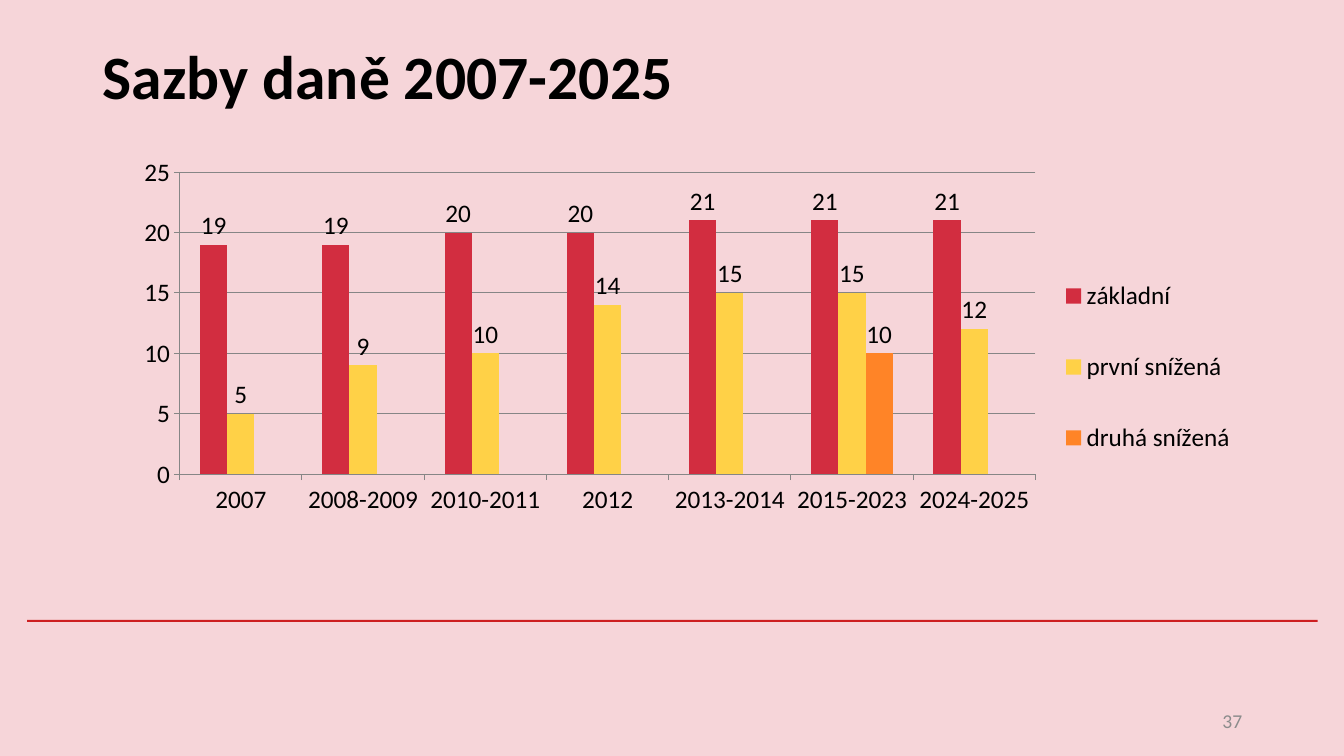
from lxml import etree
from pptx import Presentation
from pptx.chart.data import CategoryChartData
from pptx.dml.color import RGBColor
from pptx.enum.chart import XL_CHART_TYPE, XL_LABEL_POSITION, XL_LEGEND_POSITION, XL_TICK_MARK
from pptx.enum.shapes import MSO_SHAPE
from pptx.enum.text import MSO_ANCHOR, PP_ALIGN
from pptx.oxml.ns import qn
from pptx.util import Inches, Pt

CLUSTERED = XL_CHART_TYPE.COLUMN_CLUSTERED
OUTSIDE_END = XL_LABEL_POSITION.OUTSIDE_END
LEGEND_RIGHT = XL_LEGEND_POSITION.RIGHT
TICK_OUT = XL_TICK_MARK.OUTSIDE
RECTANGLE = MSO_SHAPE.RECTANGLE
MIDDLE = MSO_ANCHOR.MIDDLE
LEFT, RIGHT = PP_ALIGN.LEFT, PP_ALIGN.RIGHT

FONT = "Calibri"
COLORS = {
    "background": "F6D5D9",
    "rule": "CD1F21",
    "text": "000000",
    "number": "8C8C8C",
    "grid": "868686",
}
PERIODS = ["2007", "2008-2009", "2010-2011", "2012", "2013-2014", "2015-2023", "2024-2025"]
RATES = [
    ("základní", "D22D40", [19, 19, 20, 20, 21, 21, 21]),
    ("první snížená", "FFD147", [5, 9, 10, 14, 15, 15, 12]),
    ("druhá snížená", "FF8427", [None, None, None, None, None, 10, None]),
]


def rgb(value):
    return RGBColor.from_string(value)


def set_layout(parent, index, x, y, w, h, inner=False):
    """Place a chart part by fractions of the chart, as child number index."""
    for old in parent.findall(qn("c:layout")):
        parent.remove(old)
    layout = etree.Element(qn("c:layout"))
    manual = etree.SubElement(layout, qn("c:manualLayout"))
    items = [("layoutTarget", "inner")] if inner else []
    items += [("xMode", "edge"), ("yMode", "edge"), ("x", x), ("y", y), ("w", w), ("h", h)]
    for tag, value in items:
        etree.SubElement(manual, qn(f"c:{tag}")).set("val", str(value))
    parent.insert(index, layout)


class SlideBuilder:
    def __init__(self, prs):
        self.slide = prs.slides.add_slide(prs.slide_layouts[5])
        fill = self.slide.background.fill
        fill.solid()
        fill.fore_color.rgb = rgb(COLORS["background"])

    def style_font(self, font, size, color="text", bold=False):
        font.name = FONT
        font.size = Pt(size)
        font.bold = bold
        font.color.rgb = rgb(COLORS[color])

    def fill_text(self, sp, text, size, align, color="text", bold=False):
        tf = sp.text_frame
        tf.text = text
        tf.word_wrap = True
        tf.vertical_anchor = MIDDLE
        p = tf.paragraphs[0]
        p.alignment = align
        self.style_font(p.font, size, color, bold)

    def title(self, box, text):
        sp = self.slide.shapes.title
        sp.left, sp.top, sp.width, sp.height = map(Inches, box)
        self.fill_text(sp, text, 44, LEFT, bold=True)

    def text(self, box, text, size, align, color):
        sp = self.slide.shapes.add_textbox(*map(Inches, box))
        self.fill_text(sp, text, size, align, color)

    def bar(self, box, color):
        sp = self.slide.shapes.add_shape(RECTANGLE, *map(Inches, box))
        sp.shadow.inherit = False
        sp.fill.solid()
        sp.fill.fore_color.rgb = rgb(COLORS[color])
        sp.line.fill.background()

    def style_axis(self, axis):
        axis.major_tick_mark = TICK_OUT
        axis.format.line.color.rgb = rgb(COLORS["grid"])
        axis.format.line.width = Pt(0.75)
        self.style_font(axis.tick_labels.font, 18)

    def column_chart(self, box, categories, series):
        data = CategoryChartData()
        data.categories = categories
        for name, _, values in series:
            data.add_series(name, values)
        chart = self.slide.shapes.add_chart(CLUSTERED, *map(Inches, box), data).chart
        chart.has_title = False
        self.style_font(chart.font, 18)

        plot = chart.plots[0]
        plot.gap_width = 150
        plot.overlap = 0
        plot.vary_by_categories = False
        for ser, (_, color, _) in zip(plot.series, series):
            ser.format.fill.solid()
            ser.format.fill.fore_color.rgb = rgb(color)
            labels = ser.data_labels
            labels.show_value = True
            labels.position = OUTSIDE_END
            self.style_font(labels.font, 18)

        self.style_axis(chart.category_axis)
        axis = chart.value_axis
        self.style_axis(axis)
        axis.minimum_scale, axis.maximum_scale, axis.major_unit = 0, 25, 5
        axis.has_major_gridlines = True
        grid = axis.major_gridlines.format.line
        grid.color.rgb = rgb(COLORS["grid"])
        grid.width = Pt(0.75)

        chart.has_legend = True
        legend = chart.legend
        legend.position = LEGEND_RIGHT
        legend.include_in_layout = False
        self.style_font(legend.font, 18)
        plot_area = chart.element.find(".//" + qn("c:plotArea"))
        set_layout(plot_area, 0, 0.075, 0.052, 0.738, 0.656, inner=True)
        set_layout(chart.element.find(".//" + qn("c:legend")), 1, 0.83, 0.2, 0.16, 0.55)


def main():
    prs = Presentation()
    prs.slide_width, prs.slide_height = Inches(13.33), Inches(7.5)
    s = SlideBuilder(prs)
    s.bar((0.27, 6.15, 12.8, 0.02), "rule")
    s.title((0.92, 0.02, 11.5, 1.45), "Sazby daně 2007-2025")
    s.text((9.42, 6.95, 3, 0.4), "37", 14, RIGHT, "number")
    s.column_chart((0.92, 1.47, 11.5, 4.57), PERIODS, RATES)
    prs.save("out.pptx")


if __name__ == "__main__":
    main()
